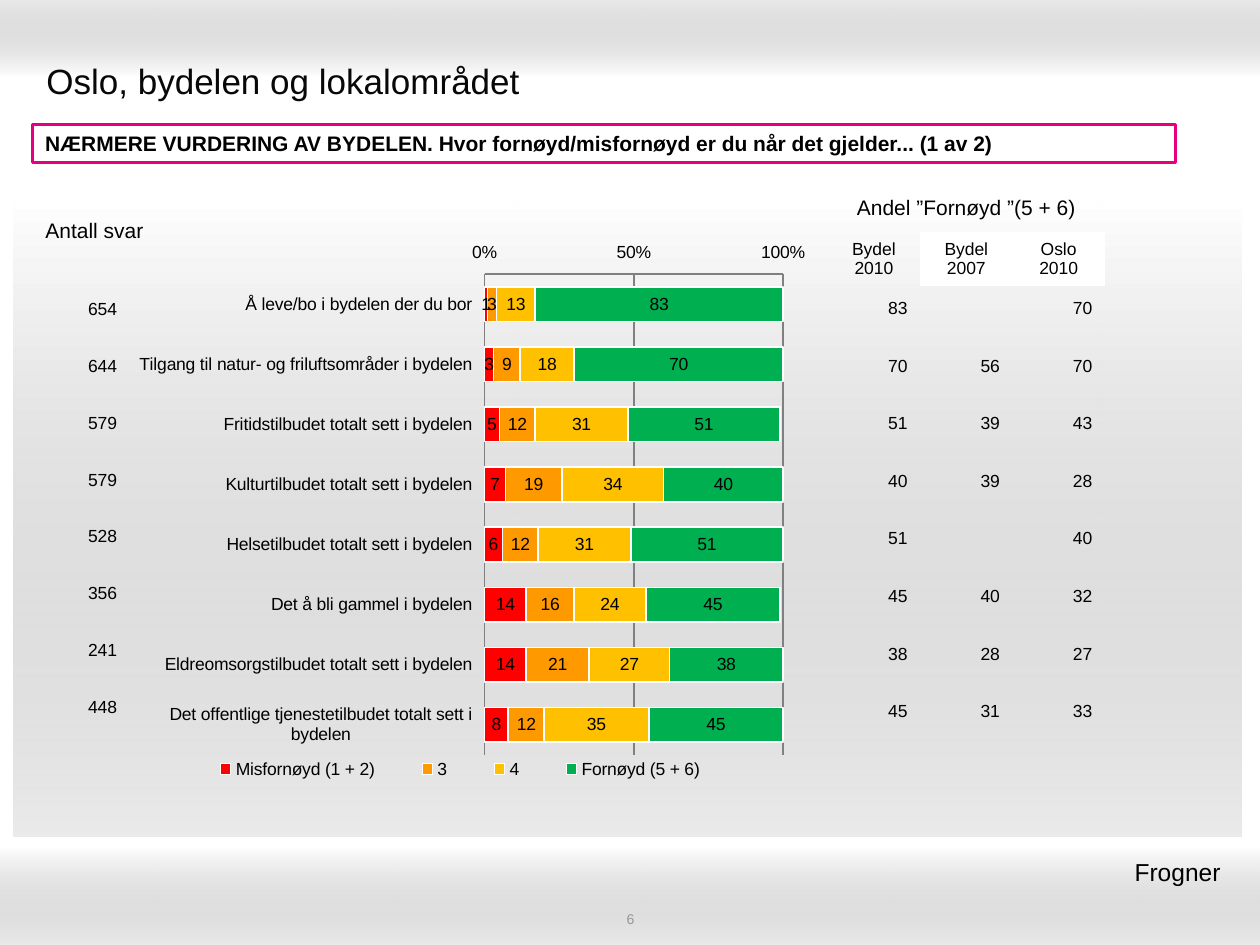
from dataclasses import dataclass

from lxml.etree import SubElement
from pptx import Presentation
from pptx.chart.data import CategoryChartData
from pptx.dml.color import RGBColor
from pptx.enum.chart import (XL_CHART_TYPE, XL_LABEL_POSITION, XL_LEGEND_POSITION,
                             XL_TICK_LABEL_POSITION, XL_TICK_MARK)
from pptx.enum.shapes import MSO_SHAPE
from pptx.enum.text import MSO_ANCHOR, PP_ALIGN
from pptx.oxml.ns import qn
from pptx.util import Pt

FONT = "Arial"
BLACK, WHITE, GRID = "000000", "FFFFFF", "808080"
NO_STYLE = "{2D5ABB26-0587-4C30-8999-92F81FD0307C}"


@dataclass
class Box:
    left: float
    top: float
    width: float
    height: float

    def lengths(self) -> list:
        return [Pt(v) for v in (self.left, self.top, self.width, self.height)]


@dataclass
class Band:
    box: Box
    angle: float


@dataclass
class Caption:
    text: str
    box: Box
    size: float
    color: str = BLACK
    align: PP_ALIGN = PP_ALIGN.LEFT
    anchor: MSO_ANCHOR = MSO_ANCHOR.MIDDLE


@dataclass
class Question:
    text: str
    answers: int
    shares: tuple
    satisfied: tuple  # Bydel 2010, Bydel 2007, Oslo 2010


BANDS = [
    Band(Box(0, 0, 720, 44.6), 90),
    Band(Box(0, 483.8, 720, 56.2), 270),
    Band(Box(7.9, 112.3, 701.3, 365.8), 270),
]
CAPTIONS = [
    Caption("Oslo, bydelen og lokalområdet", Box(19.4, 25.9, 680.4, 39.6), 20, "080808"),
    Caption("6", Box(246.2, 519.8, 228.2, 10.1), 8, "969696", PP_ALIGN.CENTER),
    Caption("Frogner ", Box(439.2, 486, 269.3, 24.5), 14,
            align=PP_ALIGN.RIGHT, anchor=MSO_ANCHOR.TOP),
]
RATINGS = [("Misfornøyd (1 + 2)", "FF0000"), ("3", "FF9900"),
           ("4", "FFC000"), ("Fornøyd (5 + 6)", "00B050")]
QUESTIONS = [
    Question("Å leve/bo i bydelen der du bor", 654, (1, 3, 13, 83), (83, "", 70)),
    Question("Tilgang til natur- og friluftsområder i bydelen", 644, (3, 9, 18, 70), (70, 56, 70)),
    Question("Fritidstilbudet totalt sett i bydelen", 579, (5, 12, 31, 51), (51, 39, 43)),
    Question("Kulturtilbudet totalt sett i bydelen", 579, (7, 19, 34, 40), (40, 39, 28)),
    Question("Helsetilbudet totalt sett i bydelen", 528, (6, 12, 31, 51), (51, "", 40)),
    Question("Det å bli gammel i bydelen", 356, (14, 16, 24, 45), (45, 40, 32)),
    Question("Eldreomsorgstilbudet totalt sett i bydelen", 241, (14, 21, 27, 38), (38, 28, 27)),
    Question("Det offentlige tjenestetilbudet totalt sett i bydelen", 448,
             (8, 12, 35, 45), (45, 31, 33)),
]


def rgb(value: str) -> RGBColor:
    return RGBColor.from_string(value)


def set_font(font, size: float, color: str = BLACK, bold: bool = False) -> None:
    font.name, font.size, font.bold = FONT, Pt(size), bold
    font.color.rgb = rgb(color)


def write(frame, text: str, size: float, color: str, align: PP_ALIGN, bold: bool = False) -> None:
    frame.text = text
    for paragraph in frame.paragraphs:
        paragraph.alignment = align
        set_font(paragraph.font, size, color, bold)


def add_band(slide, band: Band) -> None:
    shape = slide.shapes.add_shape(MSO_SHAPE.RECTANGLE, *band.box.lengths())
    shape.shadow.inherit = False
    shape.line.fill.background()
    shape.fill.gradient()
    shape.fill.gradient_angle = band.angle
    for stop, color in zip(shape.fill.gradient_stops, (WHITE, "999999")):
        stop.color.rgb = rgb(color)
    # The grey end is mostly transparent
    grey = shape.fill._xPr.findall(".//" + qn("a:srgbClr"))[-1]
    SubElement(grey, qn("a:alpha"), val="20000")


def add_caption(slide, caption: Caption) -> None:
    frame = slide.shapes.add_textbox(*caption.box.lengths()).text_frame
    frame.word_wrap = True
    frame.vertical_anchor = caption.anchor
    write(frame, caption.text, caption.size, caption.color, caption.align)


def add_topic(slide, text: str, box: Box) -> None:
    shape = slide.shapes.add_shape(MSO_SHAPE.RECTANGLE, *box.lengths())
    shape.shadow.inherit = False
    shape.fill.solid()
    shape.fill.fore_color.rgb = rgb(WHITE)
    shape.line.color.rgb = rgb("E7007E")
    shape.line.width = Pt(2)
    shape.text_frame.word_wrap = True
    shape.text_frame.vertical_anchor = MSO_ANCHOR.TOP
    write(shape.text_frame, text, 12, BLACK, PP_ALIGN.LEFT, bold=True)


def add_table(slide, rows: list, box: Box, size: float, align: PP_ALIGN):
    table = slide.shapes.add_table(len(rows), len(rows[0]), *box.lengths()).table
    table.first_row = table.horz_banding = False
    table._tbl.tblPr.find(qn("a:tableStyleId")).text = NO_STYLE
    for r, row in enumerate(rows):
        for c, value in enumerate(row):
            cell = table.cell(r, c)
            cell.fill.background()
            cell.vertical_anchor = MSO_ANCHOR.MIDDLE
            write(cell.text_frame, str(value), size, BLACK, align)
    return table


def place(element, before: str, **fractions: float) -> None:
    """Give a chart part a manual layout, in fractions of the chart."""
    old = element.find(qn("c:layout"))
    if old is not None:
        element.remove(old)
    layout = element.makeelement(qn("c:layout"))
    manual = SubElement(layout, qn("c:manualLayout"))
    if before == "c:barChart":
        SubElement(manual, qn("c:layoutTarget"), val="inner")
    for tag in ("xMode", "yMode"):
        SubElement(manual, qn("c:" + tag), val="edge")
    for tag, value in fractions.items():
        SubElement(manual, qn("c:" + tag), val=str(value))
    element.find(qn(before)).addprevious(layout)


def add_rating_chart(slide, box: Box) -> None:
    data = CategoryChartData(number_format="0")
    data.categories = [q.text for q in QUESTIONS]
    for (name, _), shares in zip(RATINGS, zip(*(q.shares for q in QUESTIONS))):
        data.add_series(name, shares)
    chart = slide.shapes.add_chart(XL_CHART_TYPE.BAR_STACKED, *box.lengths(), data).chart
    chart.has_title = False
    set_font(chart.font, 10)

    # Bars
    plot = chart.plots[0]
    plot.gap_width, plot.overlap, plot.vary_by_categories = 75, 100, False
    for series, (_, color) in zip(plot.series, RATINGS):
        series.format.fill.solid()
        series.format.fill.fore_color.rgb = rgb(color)
        series.format.line.color.rgb = rgb(WHITE)
        series.format.line.width = Pt(1)
        labels = series.data_labels
        labels.show_value = True
        labels.number_format, labels.number_format_is_linked = "0", False
        labels.position = XL_LABEL_POSITION.CENTER
        set_font(labels.font, 10)

    # Axes
    questions, percent = chart.category_axis, chart.value_axis
    questions.reverse_order = True
    questions.major_tick_mark = XL_TICK_MARK.NONE
    percent.minimum_scale, percent.maximum_scale, percent.major_unit = 0, 100, 50
    percent.major_tick_mark = XL_TICK_MARK.INSIDE
    percent.tick_labels.number_format = r"General\%"
    percent.tick_labels.number_format_is_linked = False
    for axis in (questions, percent):
        axis.tick_label_position = XL_TICK_LABEL_POSITION.LOW
    for line in (questions.format.line, percent.format.line, percent.major_gridlines.format.line):
        line.color.rgb = rgb(GRID)
        line.width = Pt(1)

    # Legend and plot placement
    chart.has_legend = True
    chart.legend.position = XL_LEGEND_POSITION.BOTTOM
    chart.legend.include_in_layout = False
    place(chart._chartSpace.chart.plotArea, "c:barChart", x=0.52, y=0.07, w=0.43, h=0.84)
    place(chart.legend._element, "c:overlay", x=0.08, y=0.91, w=0.81, h=0.05)


def main() -> None:
    prs = Presentation()
    prs.slide_width, prs.slide_height = Pt(720), Pt(540)
    slide = prs.slides.add_slide(prs.slide_layouts[6])

    # Background, captions and topic
    for band in BANDS:
        add_band(slide, band)
    for caption in CAPTIONS:
        add_caption(slide, caption)
    add_topic(slide, "NÆRMERE VURDERING AV BYDELEN. Hvor fornøyd/misfornøyd er du når det "
              "gjelder... (1 av 2)", Box(18.7, 71.3, 653, 21.6))
    add_rating_chart(slide, Box(70.6, 133.9, 396.7, 326.9))

    # Satisfied shares and their heading
    add_table(slide, [q.satisfied for q in QUESTIONS], Box(473, 159.8, 158.4, 263.5),
              10, PP_ALIGN.RIGHT)
    heading = add_table(slide, [("Andel ”Fornøyd ”(5 + 6)", "", ""),
                                ("Bydel\n2010", "Bydel\n2007", "Oslo\n2010")],
                        Box(473, 105.8, 158.4, 57.6), 10, PP_ALIGN.CENTER)
    heading.rows[0].height, heading.rows[1].height = Pt(26.6), Pt(31)
    heading.cell(0, 0).merge(heading.cell(0, 2))
    set_font(heading.cell(0, 0).text_frame.paragraphs[0].font, 12)
    for column in (1, 2):
        heading.cell(1, column).fill.solid()
        heading.cell(1, column).fill.fore_color.rgb = rgb(WHITE)

    # Number of answers
    add_table(slide, [(q.answers,) for q in QUESTIONS], Box(36.7, 160.6, 37.4, 259.9),
              10, PP_ALIGN.RIGHT)
    add_table(slide, [("Antall svar",)], Box(2.9, 110.9, 102.2, 42.5), 12, PP_ALIGN.CENTER)

    prs.save("out.pptx")


if __name__ == "__main__":
    main()
